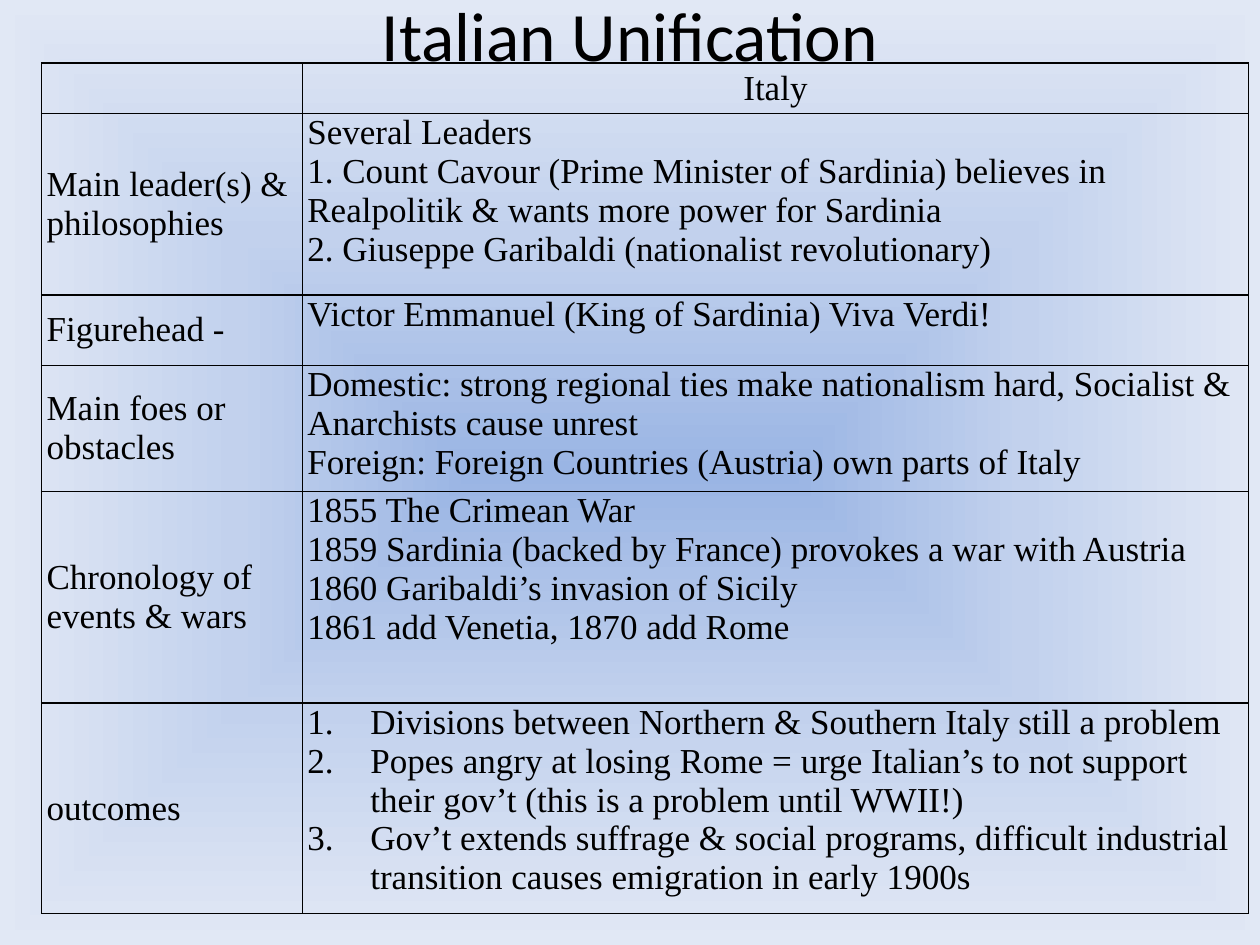
from dataclasses import dataclass

from pptx import Presentation
from pptx.dml.color import RGBColor
from pptx.enum.text import MSO_ANCHOR as Anchor, PP_ALIGN as Align
from pptx.oxml import parse_xml
from pptx.oxml.ns import nsdecls
from pptx.util import Inches, Pt


@dataclass(frozen=True)
class Theme:
    ink: str = "000000"
    glow: tuple = ((0, "9AB5E4"), (50, "C2D1ED"), (100, "E1E8F5"))
    title_font: str = "Calibri"
    body_font: str = "Times New Roman"
    title_size: float = 39.6
    body_size: float = 20
    border: float = 1


theme = Theme()


def write(frame, lines, font=theme.body_font, size=theme.body_size,
          align=Align.LEFT, numbered=False):
    frame.word_wrap = True
    for index, line in enumerate(lines):
        para = frame.paragraphs[0] if index == 0 else frame.add_paragraph()
        para.alignment = align
        span = para.add_run()
        span.text = line
        span.font.name = font
        span.font.size = Pt(size)
        span.font.color.rgb = RGBColor.from_string(theme.ink)
        if numbered:
            props = para._p.get_or_add_pPr()
            props.set("marL", str(Inches(0.5)))
            props.set("indent", str(-Inches(0.5)))
            props.append(parse_xml(
                f'<a:buFont {nsdecls("a")} typeface="+mj-lt"/>'))
            props.append(parse_xml(
                f'<a:buAutoNum {nsdecls("a")} type="arabicPeriod"/>'))


def outline(cell):
    props = cell._tc.get_or_add_tcPr()
    for place, side in enumerate(("lnL", "lnR", "lnT", "lnB")):
        props.insert(place, parse_xml(
            f'<a:{side} {nsdecls("a")} w="{Pt(theme.border)}"><a:solidFill>'
            f'<a:srgbClr val="{theme.ink}"/></a:solidFill></a:{side}>'))


deck = Presentation()
deck.slide_width, deck.slide_height = Inches(10), Inches(7.5)
page = deck.slides.add_slide(deck.slide_layouts[6])

# Background: gradient glowing from the centre
stops = "".join(f'<a:gs pos="{pos * 1000}"><a:srgbClr val="{color}"/></a:gs>'
                for pos, color in theme.glow)
page.element.cSld.insert(0, parse_xml(
    f'<p:bg {nsdecls("p", "a")}><p:bgPr><a:gradFill rotWithShape="1">'
    f'<a:gsLst>{stops}</a:gsLst><a:path path="shape">'
    '<a:fillToRect l="50000" t="50000" r="50000" b="50000"/></a:path>'
    '</a:gradFill><a:effectLst/></p:bgPr></p:bg>'))

# Title
box = page.shapes.add_textbox(Inches(0.5), Inches(0), Inches(9), Inches(0.45))
title = box.text_frame
title.vertical_anchor = Anchor.MIDDLE
title.margin_top, title.margin_bottom = Inches(0.08), 0
write(title, ["Italian Unification"], font=theme.title_font,
      size=theme.title_size, align=Align.CENTER)

# Table: row height, topic, lines about Italy
rows = [
    (0.4, "", ["Italy"]),
    (1.44, "Main leader(s) & philosophies", [
        "Several Leaders",
        "1. Count Cavour (Prime Minister of Sardinia) believes in "
        "Realpolitik & wants more power for Sardinia",
        "2. Giuseppe Garibaldi (nationalist revolutionary)"]),
    (0.56, "Figurehead -", ["Victor Emmanuel (King of Sardinia) Viva Verdi!"]),
    (0.79, "Main foes or obstacles", [
        "Domestic: strong regional ties make nationalism hard, "
        "Socialist & Anarchists cause unrest",
        "Foreign: Foreign Countries (Austria) own parts of Italy"]),
    (1.68, "Chronology of events & wars", [
        "1855 The Crimean War",
        "1859 Sardinia (backed by France) provokes a war with Austria",
        "1860 Garibaldi’s invasion of Sicily",
        "1861 add Venetia, 1870 add Rome"]),
    (1.58, "outcomes", [
        "Divisions between Northern & Southern Italy still a problem",
        "Popes angry at losing Rome = urge Italian’s to not support "
        "their gov’t (this is a problem until WWII!)",
        "Gov’t extends suffrage & social programs, difficult industrial "
        "transition causes emigration in early 1900s"]),
]
widths = (2.07, 7.51)
table = page.shapes.add_table(
    len(rows), len(widths), Inches(0.33), Inches(0.5), Inches(sum(widths)),
    Inches(sum(height for height, _, _ in rows))).table
table.first_row = table.horz_banding = False
for column, width in zip(table.columns, widths):
    column.width = Inches(width)

for index, (height, topic, lines) in enumerate(rows):
    table.rows[index].height = Inches(height)
    header = index == 0
    label, detail = table.cell(index, 0), table.cell(index, 1)
    for cell in (label, detail):
        cell.fill.background()
        cell.margin_left = cell.margin_right = Inches(0.04)
        cell.margin_top = cell.margin_bottom = 0
        outline(cell)
    label.vertical_anchor = Anchor.MIDDLE
    detail.vertical_anchor = Anchor.MIDDLE if header else Anchor.TOP
    if topic:
        write(label.text_frame, [topic])
    write(detail.text_frame, lines, numbered=topic == "outcomes",
          align=Align.CENTER if header else Align.LEFT)

deck.save("out.pptx")
